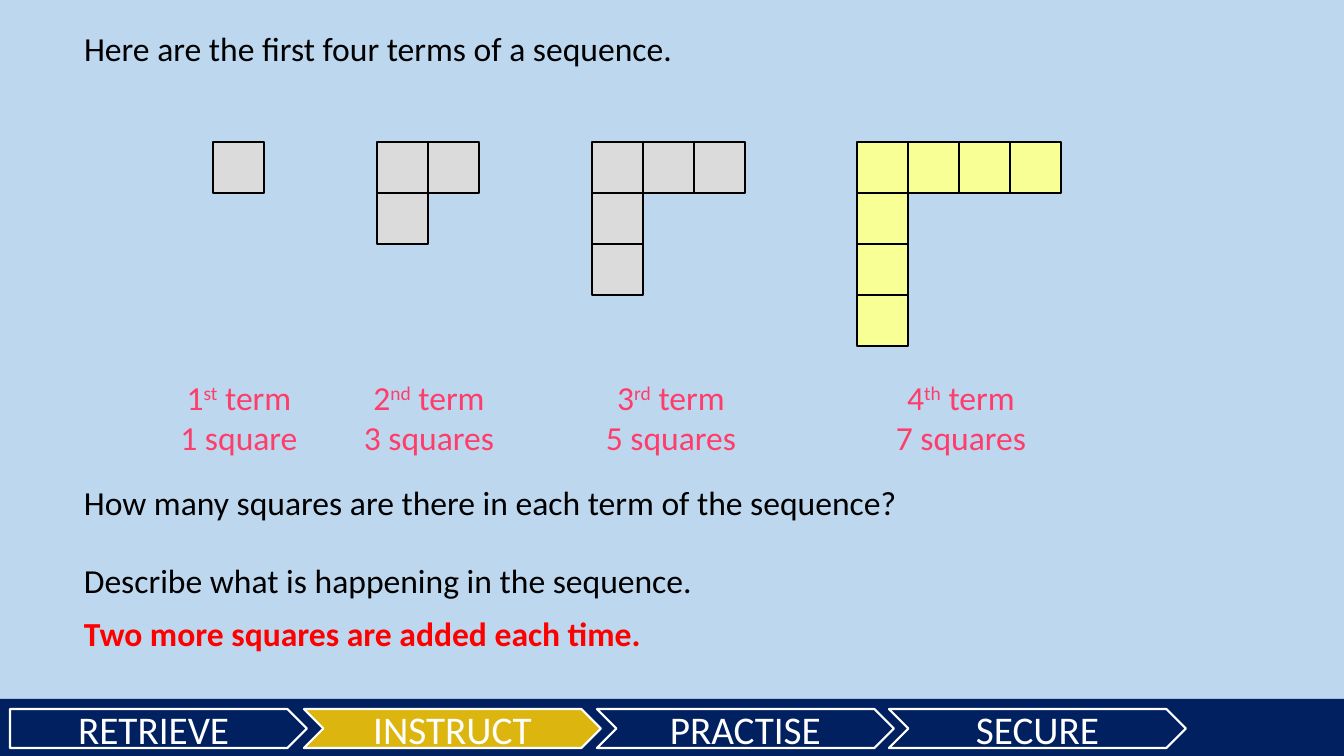
import pptx
import pptx.util
import pptx.dml.color
import pptx.enum.shapes
import pptx.enum.text

MSO = pptx.enum.shapes.MSO_SHAPE
ALIGN = pptx.enum.text.PP_ALIGN
ANCHOR = pptx.enum.text.MSO_ANCHOR

COLORS = {
    "sky": "BDD7EE", "navy": "002060", "gold": "DCB50E", "white": "FFFFFF",
    "black": "000000", "grey": "DBDBDB", "yellow": "F8FF94",
    "pink": "FF3D6B", "red": "FF0000",
}
TITLE = "Here are the first four terms of a sequence."
# text, top, width, colour, bold
LINES = [
    ("How many squares are there in each term of the sequence?", 477, 916, "black", False),
    ("Describe what is happening in the sequence.", 555, 718, "black", False),
    ("Two more squares are added each time.", 608, 718, "red", True),
]
# ordinal suffix, squares left, label left, fill
TERMS = [
    ("st", 213, 133, "grey"),
    ("nd", 377, 323, "grey"),
    ("rd", 592, 565, "grey"),
    ("th", 857, 855, "yellow"),
]
# stage, left, shape, fill
STAGES = [
    ("RETRIEVE", 10, MSO.PENTAGON, "navy"),
    ("INSTRUCT", 304, MSO.CHEVRON, "gold"),
    ("PRACTISE", 597, MSO.CHEVRON, "navy"),
    ("SECURE", 889, MSO.CHEVRON, "navy"),
]
WIDTH, HEIGHT = 1344, 756
MARGIN, LINE_H = 74, 50
CELL, CELLS_TOP = 51, 142
LABEL_TOP, LABEL_W, LABEL_H = 372, 212, 92
BAND_TOP, STAGE_TOP, STAGE_W, STAGE_H = 699, 709, 297, 39


def px(n):
    return round(n * 914400 / 100.8)


def rgb(name):
    return pptx.dml.color.RGBColor.from_string(COLORS[name])


def write(tf, paragraphs, size=24, color="black", bold=False,
          align=ALIGN.LEFT, anchor=ANCHOR.TOP):
    """Fill a frame; each paragraph is a list of (text, is_superscript) runs."""
    tf.word_wrap = True
    tf.vertical_anchor = anchor
    for i, runs in enumerate(paragraphs):
        p = tf.paragraphs[0] if i == 0 else tf.add_paragraph()
        p.alignment = align
        p.line_spacing = 1.0
        p.space_before = pptx.util.Pt(0)
        for text, raised in runs:
            r = p.add_run()
            r.text = text
            r.font.name = "Calibri"
            r.font.size = pptx.util.Pt(size)
            r.font.bold = bold
            r.font.color.rgb = rgb(color)
            if raised:
                r.font._element.set("baseline", "30000")


def add_box(slide, box, paragraphs, **fmt):
    tf = slide.shapes.add_textbox(*map(px, box)).text_frame
    write(tf, paragraphs, **fmt)
    tf.auto_size = pptx.enum.text.MSO_AUTO_SIZE.SHAPE_TO_FIT_TEXT


def add_shape(slide, kind, box, fill, line=None, weight=1):
    sp = slide.shapes.add_shape(kind, *map(px, box))
    sp.shadow.inherit = False
    sp.fill.solid()
    sp.fill.fore_color.rgb = rgb(fill)
    if line:
        sp.line.color.rgb = rgb(line)
        sp.line.width = pptx.util.Pt(weight)
    else:
        sp.line.fill.background()
    return sp


def add_stage_band(slide):
    add_shape(slide, MSO.RECTANGLE, (0, BAND_TOP, WIDTH, HEIGHT - BAND_TOP), "navy")
    for name, left, kind, fill in STAGES:
        sp = add_shape(slide, kind, (left, STAGE_TOP, STAGE_W, STAGE_H), fill, "white", 1.5)
        write(sp.text_frame, [[(name, False)]], size=28, color="white",
              align=ALIGN.CENTER, anchor=ANCHOR.MIDDLE)


def add_term(slide, n, suffix, left, label_left, fill):
    """Draw an L of n squares across and n down, with its label."""
    cells = [(col, 0) for col in range(n)] + [(0, row) for row in range(1, n)]
    for col, row in cells:
        box = (left + col * CELL, CELLS_TOP + row * CELL, CELL, CELL)
        add_shape(slide, MSO.RECTANGLE, box, fill, "black")
    count = f"{len(cells)} square" + ("s" if n > 1 else "")
    label = [[(str(n), False), (suffix, True), (" term", False)], [(count, False)]]
    add_box(slide, (label_left, LABEL_TOP, LABEL_W, LABEL_H), label,
            color="pink", align=ALIGN.CENTER)


def main():
    prs = pptx.Presentation()
    prs.slide_width, prs.slide_height = px(WIDTH), px(HEIGHT)
    slide = prs.slides.add_slide(prs.slide_layouts[5])
    slide.background.fill.solid()
    slide.background.fill.fore_color.rgb = rgb("sky")

    title = slide.shapes.title
    title.left, title.top, title.width, title.height = map(px, (MARGIN, 23, 764, LINE_H))
    write(title.text_frame, [[(TITLE, False)]])
    title.text_frame.auto_size = pptx.enum.text.MSO_AUTO_SIZE.NONE

    add_stage_band(slide)
    for n, term in enumerate(TERMS, 1):
        add_term(slide, n, *term)
    for text, top, width, color, bold in LINES:
        add_box(slide, (MARGIN, top, width, LINE_H), [[(text, False)]], color=color, bold=bold)
    prs.save("out.pptx")


if __name__ == "__main__":
    main()
